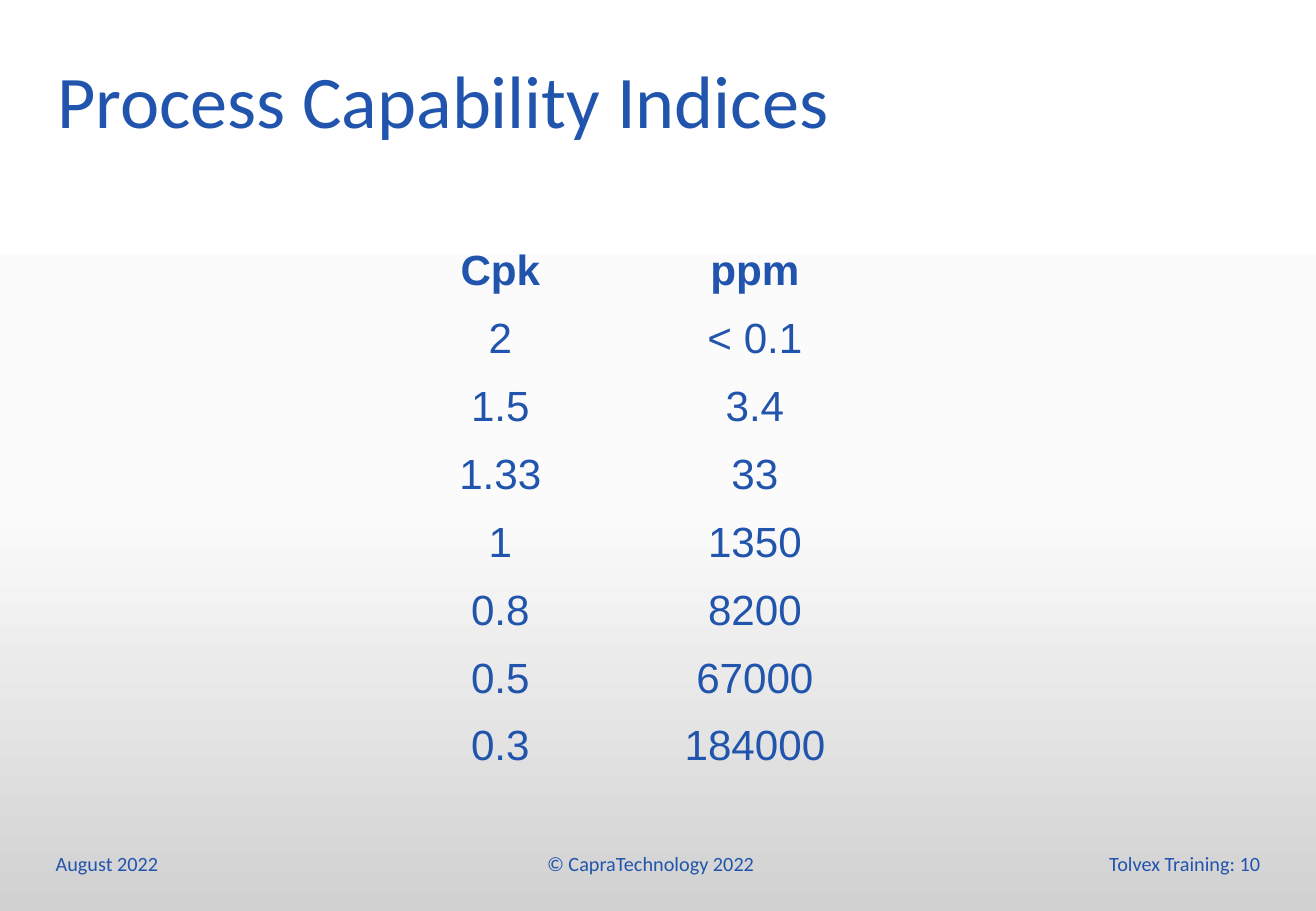
from copy import deepcopy

from pptx import Presentation
from pptx import util as u
from pptx.dml.color import RGBColor
from pptx.enum import text
from pptx.oxml.ns import qn

BLUE = RGBColor(0x21, 0x54, 0xAC)
GRADIENT = [
    (0, RGBColor(0xFF, 0xFF, 0xFF)),
    (0.56, RGBColor(0xFB, 0xFB, 0xFB)),
    (1, RGBColor(0xD1, 0xD1, 0xD1)),
]
NO_GRID_STYLE = "{2D5ABB26-0587-4C30-8999-92F81FD0307C}"
LEFT, CENTER, RIGHT = text.PP_ALIGN.LEFT, text.PP_ALIGN.CENTER, text.PP_ALIGN.RIGHT

CAPABILITY = [
    ("Cpk", "ppm"),
    ("2", "< 0.1"),
    ("1.5", "3.4"),
    ("1.33", "33"),
    ("1", "1350"),
    ("0.8", "8200"),
    ("0.5", "67000"),
    ("0.3", "184000"),
]
FOOTERS = [
    ("August 2022", 0.36, 6.95, 2.82, 0.32, LEFT),
    ("© CapraTechnology 2022", 3.64, 6.94, 3.43, 0.33, CENTER),
    ("Tolvex Training: 10", 8.03, 6.94, 2.44, 0.33, RIGHT),
]


class SlideBuilder:
    def __init__(self, deck):
        self.slide = deck.slides.add_slide(deck.slide_layouts[5])

    def set_text(self, frame, words, size, font, align, bold=False):
        frame.text = words
        para = frame.paragraphs[0]
        para.alignment = align
        span = para.runs[0].font
        span.size, span.name, span.bold = u.Pt(size), font, bold
        span.color.rgb = BLUE

    def background(self, gradient):
        fill = self.slide.background.fill
        fill.gradient()
        stop_list = self.slide.element.find(".//" + qn("a:gsLst"))
        stop_list.append(deepcopy(stop_list[0]))
        fill.gradient_angle = 270
        for stop, (position, color) in zip(fill.gradient_stops, gradient):
            stop.position = position
            stop.color.rgb = color

    def title(self, words, left, top, width, height):
        box = self.slide.shapes.title
        box.left, box.top = u.Inches(left), u.Inches(top)
        box.width, box.height = u.Inches(width), u.Inches(height)
        frame = box.text_frame
        frame.vertical_anchor = text.MSO_ANCHOR.TOP
        frame.margin_left = frame.margin_right = u.Inches(0.11)
        self.set_text(frame, words, 44, "Calibri", LEFT)

    def footer(self, words, left, top, width, height, align):
        box = self.slide.shapes.add_textbox(
            u.Inches(left), u.Inches(top), u.Inches(width), u.Inches(height))
        frame = box.text_frame
        frame.word_wrap = True
        frame.vertical_anchor = text.MSO_ANCHOR.MIDDLE
        self.set_text(frame, words, 12, "Calibri", align)

    def table(self, rows, left, top, width, height):
        table = self.slide.shapes.add_table(
            len(rows), len(rows[0]), u.Inches(left), u.Inches(top),
            u.Inches(width), u.Inches(height)).table
        table.horz_banding = False
        table._tbl.tblPr.find(qn("a:tableStyleId")).text = NO_GRID_STYLE
        for row_index, row in enumerate(rows):
            for column_index, words in enumerate(row):
                cell = table.cell(row_index, column_index)
                cell.fill.background()
                cell.margin_left = cell.margin_right = u.Inches(0.11)
                self.set_text(cell.text_frame, words, 25, "Arial", CENTER,
                              bold=row_index == 0)


def main():
    deck = Presentation()
    deck.slide_width, deck.slide_height = u.Inches(10.83), u.Inches(7.5)
    builder = SlideBuilder(deck)
    builder.background(GRADIENT)
    builder.table(CAPABILITY, 3.07, 1.99, 4.19, 4.47)
    builder.title("Process Capability Indices", 0.36, 0.4, 9.07, 1.02)
    for footer in FOOTERS:
        builder.footer(*footer)
    deck.save("out.pptx")


if __name__ == "__main__":
    main()
